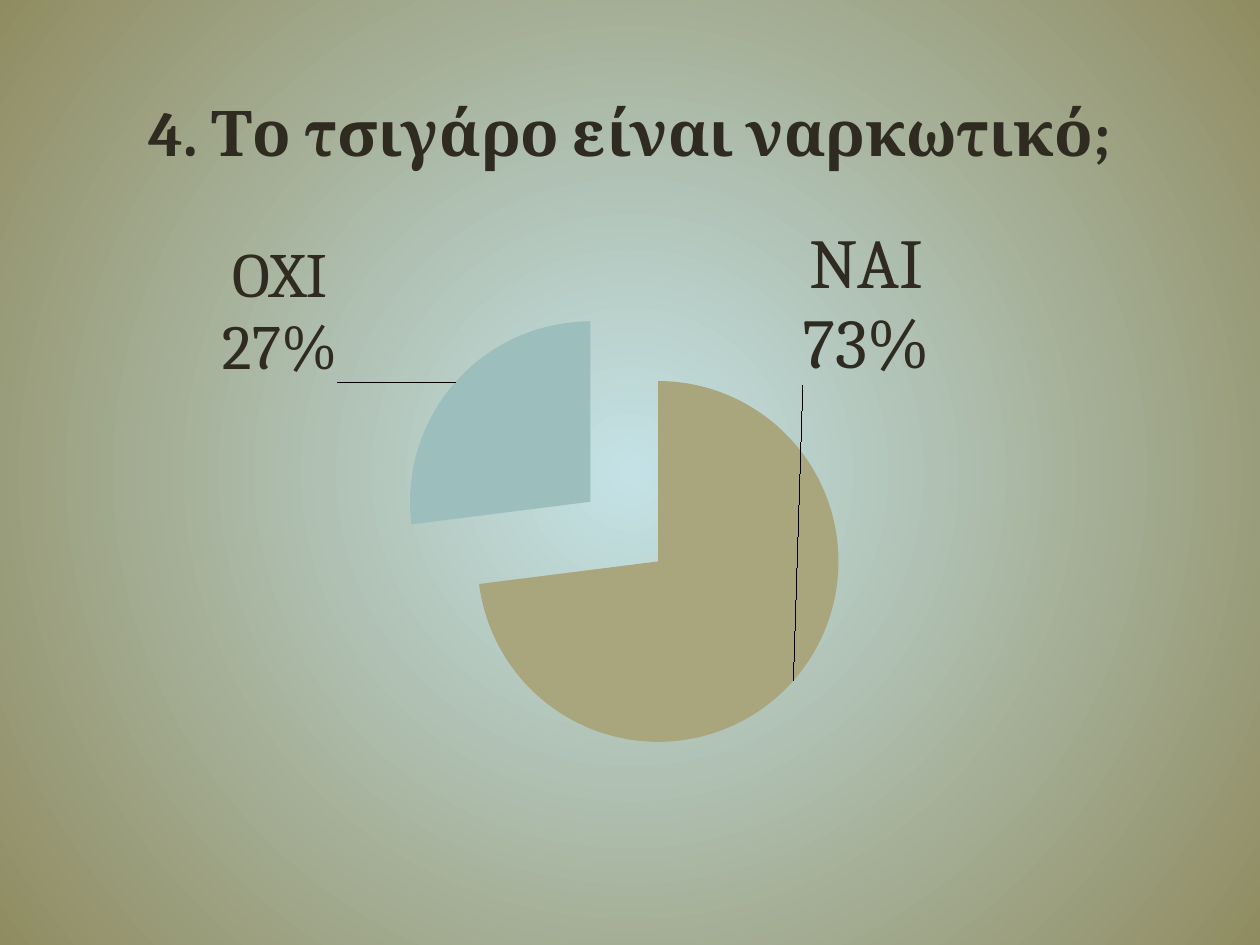
from lxml import etree
from pptx import Presentation
from pptx.chart.data import CategoryChartData
from pptx.dml.color import RGBColor
from pptx.enum.chart import XL_CHART_TYPE, XL_LABEL_POSITION
from pptx.oxml import parse_xml
from pptx.oxml.ns import qn
from pptx.util import Inches, Pt

COLORS = {"text": "2F2B20", "yes": "A9A57C", "no": "9CBEBD",
          "center": "C4E2E6", "edge": "908C61"}
QUESTION = "4. Το τσιγάρο είναι ναρκωτικό;"
CHART_NS = "http://schemas.openxmlformats.org/drawingml/2006/chart"
CHART_WIDTH, CHART_HEIGHT = 10.2, 6.6


def manual_layout(modes=(), **lengths):
    """Build a c:layout element; lengths are inches inside the chart."""
    layout = etree.Element(qn("c:layout"))
    manual = etree.SubElement(layout, qn("c:manualLayout"))
    for key, value in modes:
        etree.SubElement(manual, qn(f"c:{key}")).set("val", value)
    for key, length in lengths.items():
        whole = CHART_WIDTH if key in "xw" else CHART_HEIGHT
        etree.SubElement(manual, qn(f"c:{key}")).set("val", str(length / whole))
    return parse_xml(etree.tostring(layout))


def style_font(font, size, bold=False, name="Cambria"):
    font.name = name
    font.size = Pt(size)
    font.bold = bold
    font.color.rgb = RGBColor.from_string(COLORS["text"])


prs = Presentation()
prs.slide_width, prs.slide_height = Inches(10), Inches(7.5)
slide = prs.slides.add_slide(prs.slide_layouts[6])

# Background: circular gradient from the centre
background = slide.background.fill
background.gradient()
for stop, key, position in zip(background.gradient_stops, ("center", "edge"), (0, 1)):
    stop.color.rgb = RGBColor.from_string(COLORS[key])
    stop.position = position
gradient = slide.background._cSld.find(".//" + qn("a:gradFill"))
gradient.remove(gradient.find(qn("a:lin")))
circle = etree.SubElement(gradient, qn("a:path"))
circle.set("path", "circle")
center = etree.SubElement(circle, qn("a:fillToRect"))
for side in "ltrb":
    center.set(side, "50000")

# Pie chart
answers = CategoryChartData()
answers.categories = ["NAI", "OXI"]
answers.add_series(QUESTION, (73, 27))
chart = slide.shapes.add_chart(XL_CHART_TYPE.PIE, Inches(-0.1), Inches(0.45),
                               Inches(CHART_WIDTH), Inches(CHART_HEIGHT), answers).chart
style_font(chart.font, 10, name="Roboto")
chart.has_legend = False

# Chart title
from_edge = [("xMode", "edge"), ("yMode", "edge")]
chart.has_title = True
heading = chart.chart_title.text_frame.paragraphs[0].add_run()
heading.text = QUESTION
style_font(heading.font, 36, bold=True)
chart.chart_title.include_in_layout = False
title_xml = chart.chart_title._element
for old in title_xml.findall(qn("c:layout")):
    title_xml.remove(old)
title_xml.find(qn("c:tx")).addnext(manual_layout(from_edge, x=1.19, y=0.19))

# Plot area
plot = chart.plots[0]
plot.vary_by_categories = True
plot_area = plot._element.getparent()
for old in plot_area.findall(qn("c:layout")):
    plot_area.remove(old)
plot_area.insert(0, manual_layout([("layoutTarget", "inner")] + from_edge,
                                  x=3.26, y=1.98, w=3.59, h=3.58))

# Slices and their labels: colour, text size, label offset
pie = plot.series[0]
slices = [("yes", 40, 0.03, -3.65), ("no", 36, -0.89, 0.06)]
for index, (key, size, dx, dy) in enumerate(slices):
    point = pie.points[index]
    point.format.fill.solid()
    point.format.fill.fore_color.rgb = RGBColor.from_string(COLORS[key])
    style_font(point.data_label.font, size)
    point.data_label.position = XL_LABEL_POSITION.OUTSIDE_END

all_labels = pie.data_labels
style_font(all_labels.font, 36)
all_labels.show_value = False
all_labels.show_category_name = True
all_labels.show_percentage = True
label_xmls = all_labels._element.findall(qn("c:dLbl"))
for label, (key, size, dx, dy) in zip(label_xmls, slices):
    label.find(qn("c:idx")).addnext(manual_layout(x=dx, y=dy))
    for flag, value in (("showVal", "0"), ("showCatName", "1"), ("showPercent", "1")):
        label.find(qn(f"c:{flag}")).set("val", value)
    label.append(parse_xml(f'<c:separator xmlns:c="{CHART_NS}">\n</c:separator>'))

# Both slices pulled out
explosion = parse_xml(f'<c:explosion xmlns:c="{CHART_NS}" val="25"/>')
pie._element.find(qn("c:dPt")).addprevious(explosion)

prs.save("out.pptx")
